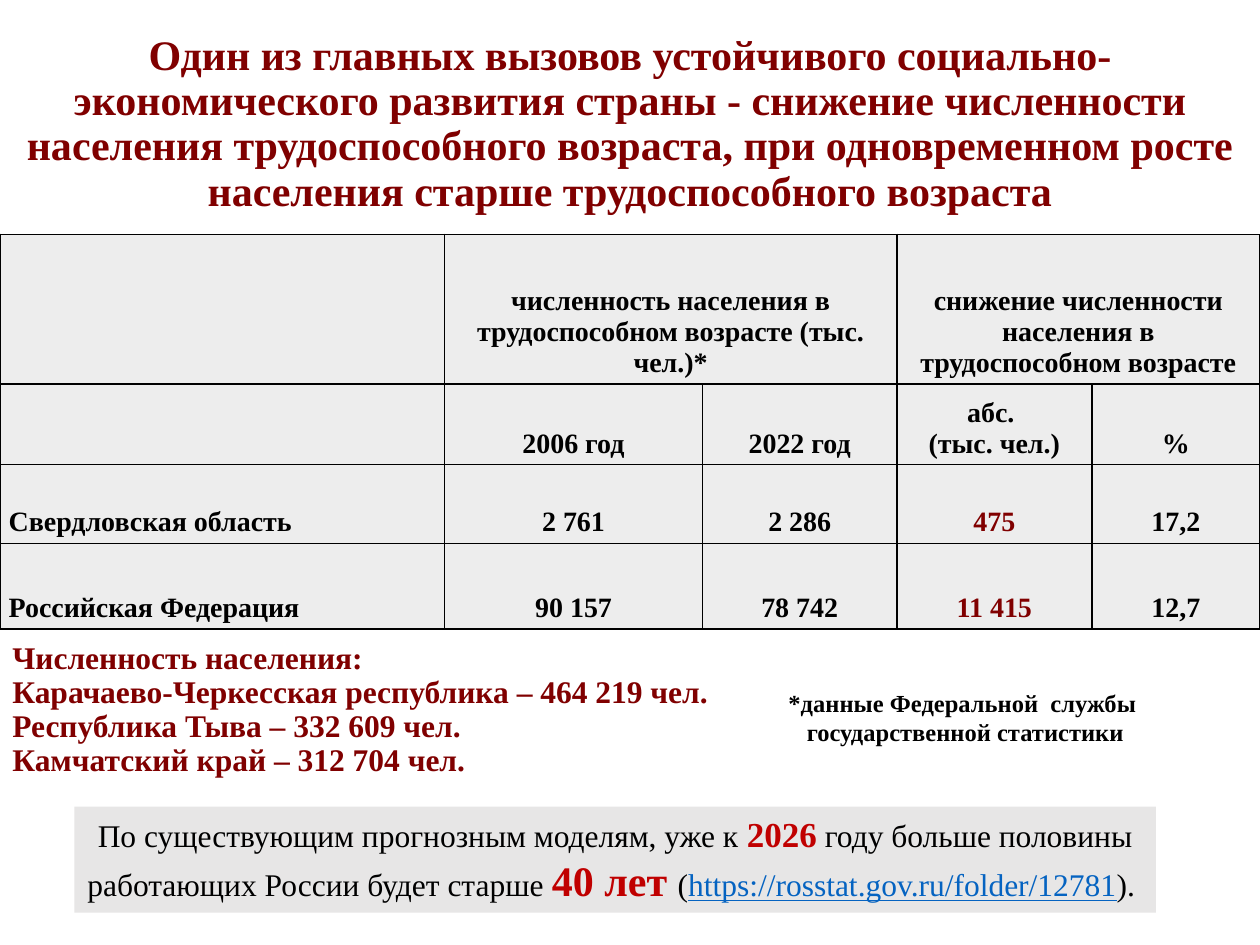
from lxml.etree import SubElement
from pptx import Presentation
from pptx.dml.color import RGBColor
from pptx.enum.shapes import MSO_SHAPE
from pptx.enum.text import MSO_ANCHOR, PP_ALIGN
from pptx.oxml.ns import qn
from pptx.util import Pt

COLORS = {
    "maroon": "800000", "red": "C00000", "black": "000000", "link": "0563C1",
    "cell": "EDEDED", "panel": "E7E6E6", "white": "FFFFFF",
}


def set_font(font, size, color, bold=True):
    font.name = "Times New Roman"
    font.size = Pt(size)
    font.bold = bold
    font.color.rgb = RGBColor.from_string(COLORS[color])


def add_panel(page, left, top, width, height, fill):
    panel = page.shapes.add_shape(
        MSO_SHAPE.RECTANGLE, Pt(left), Pt(top), Pt(width), Pt(height))
    panel.shadow.inherit = False
    panel.fill.solid()
    panel.fill.fore_color.rgb = RGBColor.from_string(COLORS[fill])
    panel.line.fill.background()
    panel.text_frame.word_wrap = True
    return panel


deck = Presentation()
deck.slide_width, deck.slide_height = Pt(720), Pt(540)
page = deck.slides.add_slide(deck.slide_layouts[5])

title = page.shapes.title
title.left, title.top, title.width, title.height = Pt(0), Pt(-1.5), Pt(720), Pt(145.5)
title.text_frame.text = (
    "Один из главных вызовов устойчивого социально-экономического развития страны "
    "- снижение численности населения трудоспособного возраста, при одновременном "
    "росте населения старше трудоспособного возраста")
title.text_frame.vertical_anchor = MSO_ANCHOR.MIDDLE
para = title.text_frame.paragraphs[0]
para.alignment = PP_ALIGN.CENTER
para.line_spacing = 0.9
set_font(para.font, 24, "maroon")

column_widths = [254, 147.5, 111, 111.5, 96]
row_heights = [85.5, 46, 45, 49]
rows = [
    ["", "численность населения в трудоспособном возрасте (тыс. чел.)*", "",
     "снижение численности населения в трудоспособном возрасте", ""],
    ["", "2006 год", "2022 год", "абс. \n(тыс. чел.)", "%"],
    ["Свердловская область", "2 761", "2 286", "475", "17,2"],
    ["Российская Федерация", "90 157", "78 742", "11 415", "12,7"],
]
table = page.shapes.add_table(
    len(rows), len(column_widths), Pt(0), Pt(134), Pt(720), Pt(sum(row_heights))).table
for column, width in zip(table.columns, column_widths):
    column.width = Pt(width)
for row, height in zip(table.rows, row_heights):
    row.height = Pt(height)
for first in (1, 3):
    table.cell(0, first).merge(table.cell(0, first + 1))

for row_index, texts in enumerate(rows):
    for column_index, text in enumerate(texts):
        cell = table.cell(row_index, column_index)
        cell.margin_left = cell.margin_right = Pt(5)
        cell.margin_top = cell.margin_bottom = Pt(3)
        cell.vertical_anchor = MSO_ANCHOR.BOTTOM
        if text:
            cell.text_frame.text = text
        is_decline = row_index > 1 and column_index == 3
        for para in cell.text_frame.paragraphs:
            para.alignment = PP_ALIGN.CENTER if column_index else PP_ALIGN.LEFT
            set_font(para.font, 16, "maroon" if is_decline else "black")
        properties = cell._tc.get_or_add_tcPr()
        for side in ("a:lnL", "a:lnR", "a:lnT", "a:lnB"):
            border = SubElement(properties, qn(side), w=str(Pt(1)))
            line_fill = SubElement(border, qn("a:solidFill"))
            SubElement(line_fill, qn("a:srgbClr"), val=COLORS["black"])
        cell.fill.solid()
        cell.fill.fore_color.rgb = RGBColor.from_string(COLORS["cell"])

population = add_panel(page, 0, 368, 437, 75.5, "white")
population.text_frame.vertical_anchor = MSO_ANCHOR.MIDDLE
population.text_frame.text = "\n".join([
    "Численность населения:",
    "Карачаево-Черкесская республика – 464 219 чел.",
    "Республика Тыва – 332 609 чел.",
    "Камчатский край – 312 704 чел.",
])
for para in population.text_frame.paragraphs:
    para.alignment = PP_ALIGN.LEFT
    para.line_spacing = 0.9
    set_font(para.font, 18, "maroon")

footnote = page.shapes.add_textbox(Pt(408), Pt(389.5), Pt(287.5), Pt(41))
footnote.text_frame.word_wrap = True
footnote.text_frame.text = "*данные Федеральной  службы \nгосударственной статистики"
for para in footnote.text_frame.paragraphs:
    para.alignment = PP_ALIGN.CENTER
    set_font(para.font, 14, "black")

forecast = add_panel(page, 42.5, 461, 618, 60.5, "panel")
forecast.text_frame.vertical_anchor = MSO_ANCHOR.TOP
para = forecast.text_frame.paragraphs[0]
para.alignment = PP_ALIGN.CENTER
for text, size, color, bold in [
    ("По существующим прогнозным моделям, уже к ", 18, "black", False),
    ("2026", 20, "red", True),
    (" году больше половины работающих России будет старше ", 18, "black", False),
    ("40 лет ", 24, "red", True),
    ("(", 18, "black", False),
    ("https://rosstat.gov.ru/folder/12781", 18, "link", False),
    ("). ", 18, "black", False),
]:
    span = para.add_run()
    span.text = text
    set_font(span.font, size, color, bold)
    span.font.underline = color == "link"

deck.save("out.pptx")
